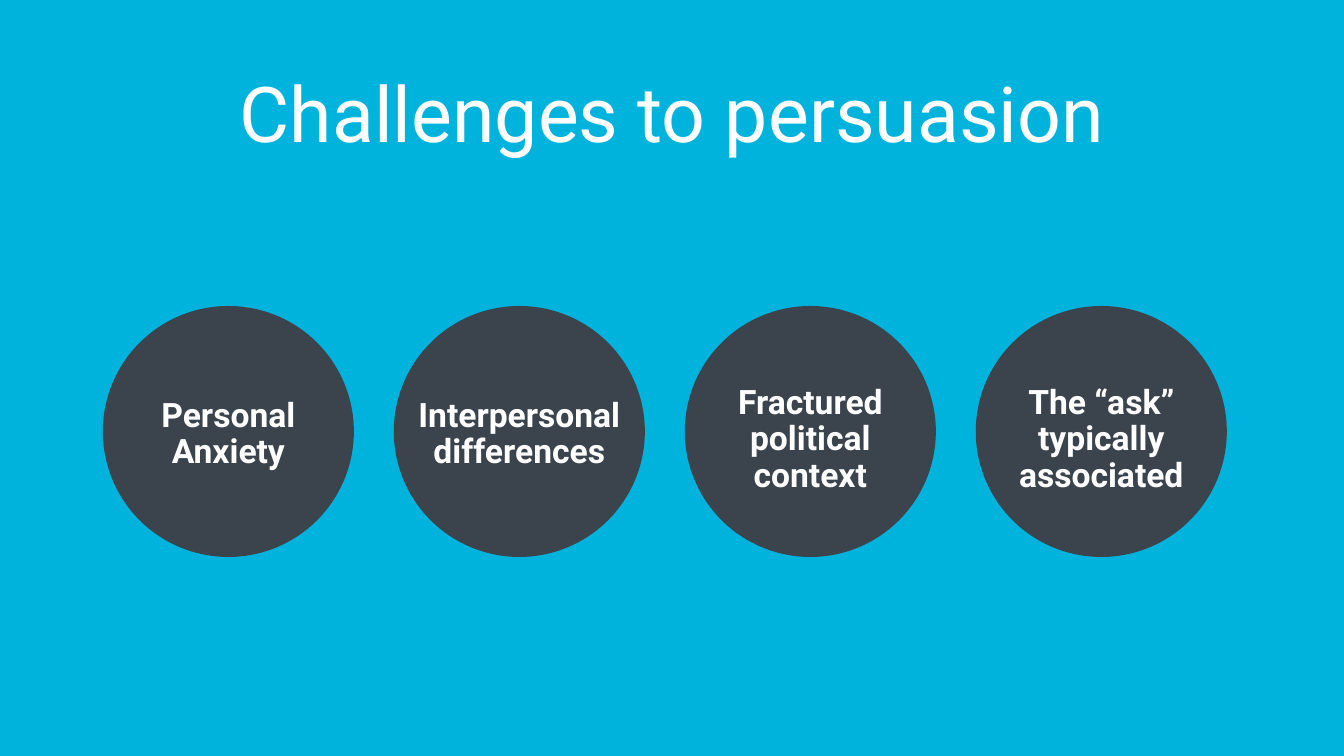
from dataclasses import dataclass

from pptx import Presentation
from pptx.dml.color import RGBColor
from pptx.enum.shapes import MSO_SHAPE
from pptx.enum.text import MSO_ANCHOR, PP_ALIGN
from pptx.slide import Slide
from pptx.util import Inches, Pt

RECTANGLE = MSO_SHAPE.RECTANGLE
OVAL = MSO_SHAPE.OVAL
CENTER = PP_ALIGN.CENTER
TOP = MSO_ANCHOR.TOP

SLIDE_WIDTH = Inches(13.33)
SLIDE_HEIGHT = Inches(7.5)
COLUMN = SLIDE_WIDTH / 100
ROW = SLIDE_HEIGHT / 100


@dataclass(frozen=True)
class Theme:
    font: str = "Roboto"
    background: RGBColor = RGBColor(0x00, 0xB3, 0xDC)
    disc: RGBColor = RGBColor(0x3B, 0x44, 0x4D)
    text: RGBColor = RGBColor(0xFF, 0xFF, 0xFF)
    title_size: Pt = Pt(55)
    label_size: Pt = Pt(24)


@dataclass(frozen=True)
class Area:
    column: float
    row: float
    columns: float
    rows: float

    def bounds(self) -> tuple[int, int, int, int]:
        return (
            round(self.column * COLUMN),
            round(self.row * ROW),
            round(self.columns * COLUMN),
            round(self.rows * ROW),
        )


@dataclass(frozen=True)
class Challenge:
    label: str
    label_row: float


THEME = Theme()
TWO_LINE_ROW = 52
THREE_LINE_ROW = 50.33
CHALLENGES = (
    Challenge("Personal Anxiety", TWO_LINE_ROW),
    Challenge("Interpersonal differences", TWO_LINE_ROW),
    Challenge("Fractured political context", THREE_LINE_ROW),
    Challenge("The “ask” typically associated", THREE_LINE_ROW),
)
FIRST_COLUMN = 7.65
COLUMN_STEP = 21.65
DISC_ROW = 40.47
DISC_COLUMNS = 18.68
DISC_ROWS = 33.2
LABEL_ROWS = 6.8


def add_filled(page: Slide, kind: MSO_SHAPE, area: Area, color: RGBColor) -> None:
    shape = page.shapes.add_shape(kind, *area.bounds())
    shape.shadow.inherit = False
    shape.fill.solid()
    shape.fill.fore_color.rgb = color
    shape.line.fill.background()


def add_text(
    page: Slide, area: Area, text: str, size: Pt, spacing: float, bold: bool = False
) -> None:
    frame = page.shapes.add_textbox(*area.bounds()).text_frame
    frame.word_wrap = True
    frame.vertical_anchor = TOP
    para = frame.paragraphs[0]
    para.text = text
    para.alignment = CENTER
    para.line_spacing = spacing
    para.font.name = THEME.font
    para.font.size = size
    para.font.bold = bold
    para.font.color.rgb = THEME.text


def add_challenge(page: Slide, column: float, challenge: Challenge) -> None:
    disc = Area(column, DISC_ROW, DISC_COLUMNS, DISC_ROWS)
    label = Area(column, challenge.label_row, DISC_COLUMNS, LABEL_ROWS)
    add_filled(page, OVAL, disc, THEME.disc)
    add_text(page, label, challenge.label, THEME.label_size, 0.9, bold=True)


def main() -> None:
    deck = Presentation()
    deck.slide_width = SLIDE_WIDTH
    deck.slide_height = SLIDE_HEIGHT
    page = deck.slides.add_slide(deck.slide_layouts[6])
    add_filled(page, RECTANGLE, Area(0, 0, 100, 100), THEME.background)
    title = Area(0, 10.4, 100, 9.6)
    add_text(page, title, "Challenges to persuasion", THEME.title_size, 0.8)
    for index, challenge in enumerate(CHALLENGES):
        add_challenge(page, FIRST_COLUMN + index * COLUMN_STEP, challenge)
    deck.save("out.pptx")


if __name__ == "__main__":
    main()
